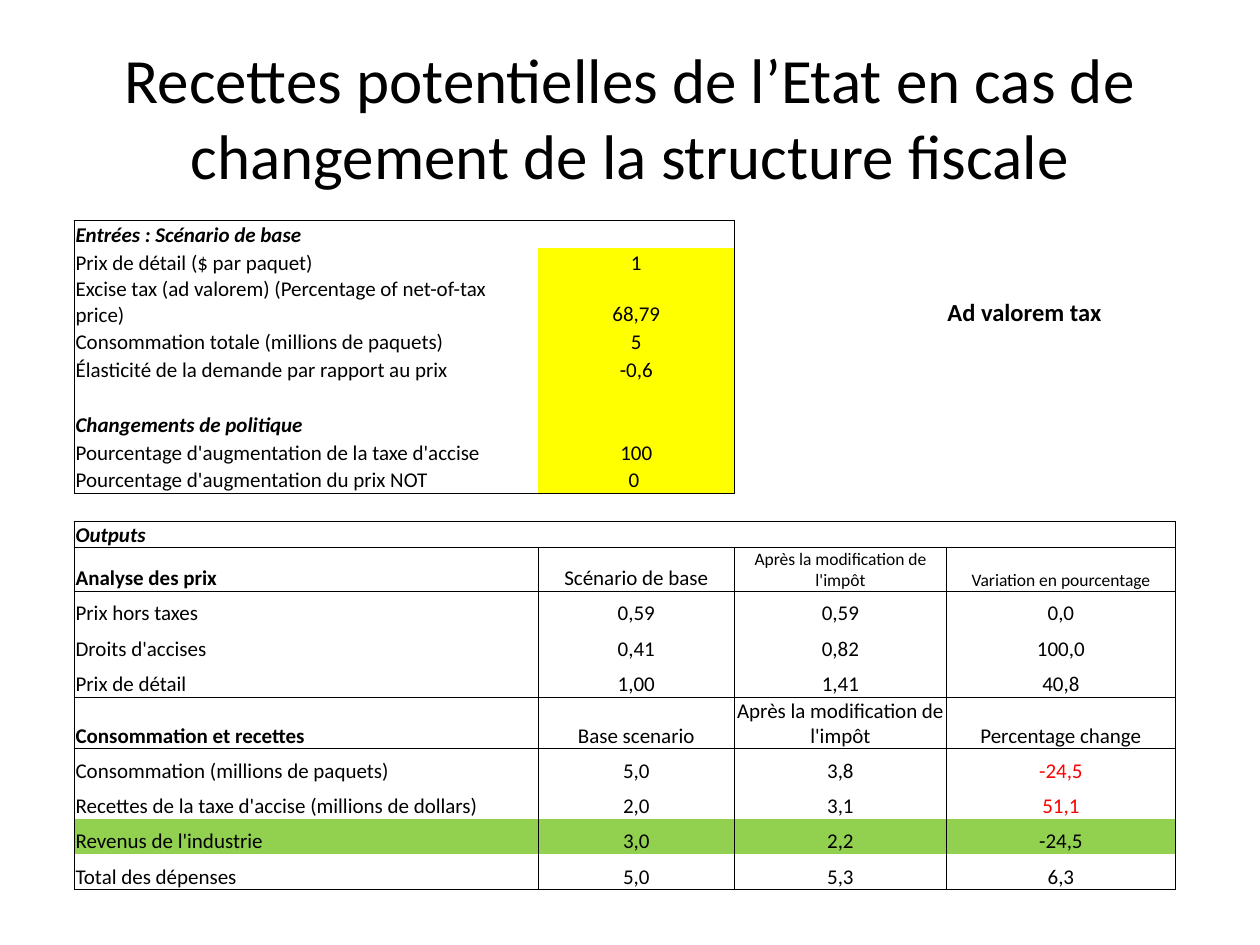
import pptx
import pptx.util
import pptx.dml.color
import pptx.enum.text
from lxml import etree
from pptx.util import Inches, Pt

FONT = "Calibri"
BLACK, RED, YELLOW, GREEN = "000000", "FF0000", "FFFF00", "92D050"
CENTER = pptx.enum.text.PP_ALIGN.CENTER
LEFT = pptx.enum.text.PP_ALIGN.LEFT
A = "{http://schemas.openxmlformats.org/drawingml/2006/main}"

COL_WIDTHS = [3.68, 1.56, 1.68, 1.82]
ROW_HEIGHTS = ([0.22, 0.22, 0.4] + [0.22] * 7 + [0.2, 0.34]
               + [0.28] * 3 + [0.4] + [0.28] * 4)
ROWS = [
    ["Entrées : Scénario de base"],
    ["Prix de détail ($ par paquet)", "1"],
    ["Excise tax (ad valorem) (Percentage of net-of-tax price)", "68,79", "", "Ad valorem tax"],
    ["Consommation totale (millions de paquets)", "5"],
    ["Élasticité de la demande par rapport au prix", "-0,6"],
    [],
    ["Changements de politique"],
    ["Pourcentage d'augmentation de la taxe d'accise", "100"],
    ["Pourcentage d'augmentation du prix NOT", "0 "],
    [],
    ["Outputs"],
    ["Analyse des prix", "Scénario de base", "Après la modification de l'impôt",
     "Variation en pourcentage"],
    ["Prix hors taxes", "0,59", "0,59", "0,0"],
    ["Droits d'accises", "0,41", "0,82", "100,0"],
    ["Prix de détail", "1,00", "1,41", "40,8"],
    ["Consommation et recettes", "Base scenario", "Après la modification de l'impôt",
     "Percentage change"],
    ["Consommation (millions de paquets)", "5,0", "3,8", "-24,5"],
    ["Recettes de la taxe d'accise (millions de dollars)", "2,0", "3,1", "51,1"],
    ["Revenus de l'industrie", "3,0", "2,2", "-24,5"],
    ["Total des dépenses", "5,0", "5,3", "6,3"],
]
SECTION_ROWS = {0, 6, 10}
HEADER_ROWS = {11, 15}
INDUSTRY_ROW = 18
NOTE_CELL = (2, 3)
SMALL_CELLS = {(11, 2), (11, 3)}
RED_CELLS = {(16, 3), (17, 3)}

# Outlined blocks: first row, first column, last row, last column
BLOCKS = [(0, 0, 8, 1), (10, 0, 10, 3)] + [
    (first, c, last, c)
    for first, last in [(11, 11), (12, 14), (15, 15), (16, 19)]
    for c in range(4)
]


def color(hex_value):
    return pptx.dml.color.RGBColor.from_string(hex_value)


def grid_edges(blocks):
    """Return the ruled horizontal and vertical grid edges around the blocks."""
    edges = set()
    for top, left, bottom, right in blocks:
        for c in range(left, right + 1):
            edges |= {("h", top, c), ("h", bottom + 1, c)}
        for r in range(top, bottom + 1):
            edges |= {("v", r, left), ("v", r, right + 1)}
    return edges


def set_borders(cell, r, c, edges):
    tc_pr = cell._tc.get_or_add_tcPr()
    sides = [("lnL", ("v", r, c)), ("lnR", ("v", r, c + 1)),
             ("lnT", ("h", r, c)), ("lnB", ("h", r + 1, c))]
    for tag, edge in sides:
        ln = etree.SubElement(tc_pr, A + tag, w=str(Pt(0.5)))
        if edge in edges:
            fill = etree.SubElement(ln, A + "solidFill")
            etree.SubElement(fill, A + "srgbClr", val=BLACK)
        else:
            etree.SubElement(ln, A + "noFill")


def set_fill(cell, r, c):
    if r == INDUSTRY_ROW or (c == 1 and 1 <= r <= 8):
        cell.fill.solid()
        cell.fill.fore_color.rgb = color(GREEN if r == INDUSTRY_ROW else YELLOW)
    else:
        cell.fill.background()


def set_text(cell, r, c, text):
    cell.margin_left = cell.margin_right = cell.margin_top = Inches(0.01)
    cell.margin_bottom = 0
    cell.vertical_anchor = pptx.enum.text.MSO_ANCHOR.BOTTOM
    p = cell.text_frame.paragraphs[0]
    if not text:
        # Keeps an empty cell from stretching its row
        etree.SubElement(p._p, A + "endParaRPr", sz="1200")
        return
    p.text = text
    is_note = (r, c) == NOTE_CELL
    p.alignment = LEFT if c == 0 or is_note else CENTER
    font = p.runs[0].font
    font.name = FONT
    font.size = Pt(14 if is_note else 10 if (r, c) in SMALL_CELLS else 12)
    font.bold = is_note or (c == 0 and r in SECTION_ROWS | HEADER_ROWS)
    font.italic = c == 0 and r in SECTION_ROWS
    font.color.rgb = color(RED if (r, c) in RED_CELLS else BLACK)


def add_title(s, left, top, width, height):
    tf = s.shapes.add_textbox(Inches(left), Inches(top), Inches(width), Inches(height)).text_frame
    tf.word_wrap = True
    tf.vertical_anchor = pptx.enum.text.MSO_ANCHOR.MIDDLE
    tf.text = "Recettes potentielles de l’Etat en cas de changement de la structure fiscale"
    p = tf.paragraphs[0]
    p.alignment = CENTER
    font = p.runs[0].font
    font.name = FONT
    font.size = Pt(36)
    font.color.rgb = color(BLACK)


def add_tax_table(s, left, top):
    table = s.shapes.add_table(
        len(ROWS), len(COL_WIDTHS), Inches(left), Inches(top),
        Inches(sum(COL_WIDTHS)), Inches(sum(ROW_HEIGHTS))).table
    table.first_row = table.horz_banding = False
    for column, width in zip(table.columns, COL_WIDTHS):
        column.width = Inches(width)
    edges = grid_edges(BLOCKS)
    for r, (texts, height) in enumerate(zip(ROWS, ROW_HEIGHTS)):
        table.rows[r].height = Inches(height)
        for c in range(len(COL_WIDTHS)):
            cell = table.cell(r, c)
            set_text(cell, r, c, texts[c] if c < len(texts) else "")
            set_borders(cell, r, c, edges)
            set_fill(cell, r, c)


def main():
    prs = pptx.Presentation()
    prs.slide_width, prs.slide_height = Inches(10), Inches(7.5)
    s = prs.slides.add_slide(prs.slide_layouts[6])
    add_title(s, 0.5, 0.3, 9, 1.25)
    add_tax_table(s, 0.59, 1.75)
    prs.save("out.pptx")


if __name__ == "__main__":
    main()
